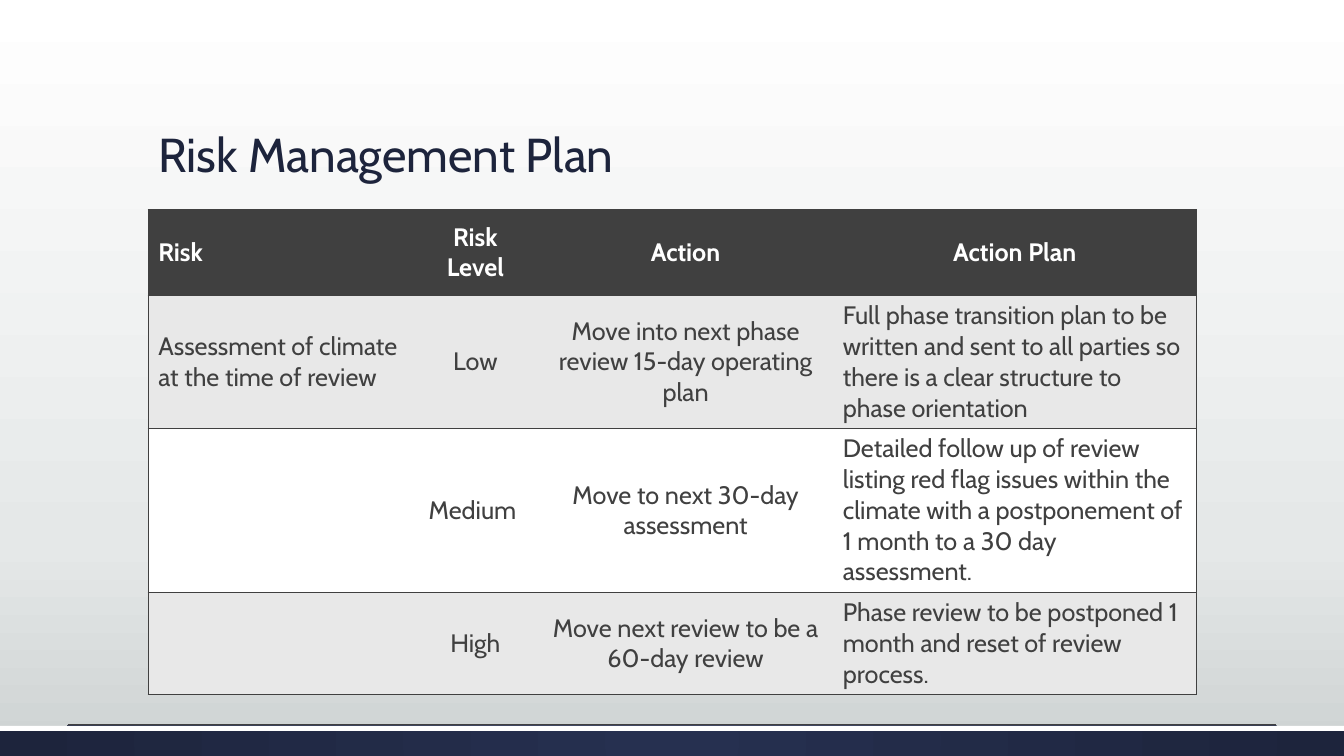
from lxml.etree import SubElement
from pptx import Presentation
from pptx.dml.color import RGBColor
from pptx.enum.shapes import MSO_CONNECTOR, MSO_SHAPE
from pptx.enum.text import MSO_ANCHOR, PP_ALIGN
from pptx.oxml.ns import qn
from pptx.util import Inches, Pt

FONT = "Cabin"
COLORS = {
    "navy": "1D243C",
    "blue": "263050",
    "dark": "404040",
    "band": "E8E8E8",
    "white": "FFFFFF",
    "mist": "E5E8E8",
    "gray": "CDD2D2",
}
TITLE = "Risk Management Plan"
ROWS = [
    ("Risk", "Risk Level", "Action", "Action Plan"),
    ("Assessment of climate at the time of review", "Low",
     "Move into next phase review 15-day operating plan",
     "Full phase transition plan to be written and sent to all parties so "
     "there is a clear structure to phase orientation"),
    ("", "Medium ", "Move to next 30-day assessment",
     "Detailed follow up of review listing red flag issues within the climate "
     "with a postponement of 1 month to a 30 day assessment."),
    ("", "High", "Move next review to be a 60-day review",
     "Phase review to be postponed 1 month and reset of review process."),
]
COLUMN_WIDTHS = (2.62, 1.25, 2.92, 3.61)
ROW_HEIGHT = 0.85
LEFT, TABLE_TOP = 1.47, 2.08
CONTENT_WIDTH = sum(COLUMN_WIDTHS)
SLIDE_WIDTH, SLIDE_HEIGHT = 13.33, 7.5
BAR_TOP = 7.2


def color(name):
    return RGBColor.from_string(COLORS[name])


def set_gradient(fill, element, stops, circular=False):
    """Fill with (percent, colour) stops, top to bottom or out from the centre."""
    fill.gradient()
    gradient = element.find(".//" + qn("a:gradFill"))
    for child in list(gradient):
        gradient.remove(child)
    stop_list = SubElement(gradient, qn("a:gsLst"))
    for percent, name in stops:
        stop = SubElement(stop_list, qn("a:gs"), pos=str(percent * 1000))
        SubElement(stop, qn("a:srgbClr"), val=COLORS[name])
    if circular:
        direction = SubElement(gradient, qn("a:path"), path="circle")
        sides = {side: "50000" for side in "ltrb"}
        SubElement(direction, qn("a:fillToRect"), **sides)
    else:
        SubElement(gradient, qn("a:lin"), ang="5400000", scaled="0")


def format_text(text_frame, alignment, font_format, color_name):
    paragraph = text_frame.paragraphs[0]
    paragraph.alignment = alignment
    for attribute, value in font_format.items():
        setattr(paragraph.font, attribute, value)
    paragraph.font.color.rgb = color(color_name)
    for run in paragraph.runs:
        for attribute, value in font_format.items():
            setattr(run.font, attribute, value)
        run.font.color.rgb = color(color_name)


def set_borders(cell, visible_sides):
    properties = cell._tc.get_or_add_tcPr()
    for side in "LRTB":
        line = SubElement(properties, qn("a:ln" + side), w=str(Pt(1)))
        if side in visible_sides:
            solid = SubElement(line, qn("a:solidFill"))
            SubElement(solid, qn("a:srgbClr"), val=COLORS["dark"])
        else:
            SubElement(line, qn("a:noFill"))


def add_bar(slide, height):
    bar = slide.shapes.add_shape(
        MSO_SHAPE.RECTANGLE, 0, Inches(BAR_TOP), Inches(SLIDE_WIDTH), Inches(height))
    bar.shadow.inherit = False
    bar.line.fill.background()
    return bar


def add_footer(slide):
    bar = add_bar(slide, SLIDE_HEIGHT - BAR_TOP)
    set_gradient(bar.fill, bar.element, [(0, "blue"), (100, "navy")], circular=True)
    strip = add_bar(slide, 0.05)
    strip.fill.solid()
    strip.fill.fore_color.rgb = color("white")
    margin, line_top = Inches(0.67), Inches(7.19)
    rule = slide.shapes.add_connector(
        MSO_CONNECTOR.STRAIGHT, margin, line_top, Inches(SLIDE_WIDTH) - margin, line_top)
    rule.line.width = Pt(0.75)
    rule.line.color.rgb = color("dark")
    SubElement(rule.element.spPr, qn("a:effectLst"))


def add_title(slide):
    title = slide.shapes.title
    box = {"left": LEFT, "top": 0.51, "width": CONTENT_WIDTH, "height": 1.35}
    for attribute, value in box.items():
        setattr(title, attribute, Inches(value))
    title.text_frame.text = TITLE
    title.text_frame.vertical_anchor = MSO_ANCHOR.BOTTOM
    title.text_frame.paragraphs[0].line_spacing = 0.9
    format_text(title.text_frame, PP_ALIGN.LEFT, {"name": FONT, "size": Pt(34)}, "navy")


def add_risk_table(slide):
    table = slide.shapes.add_table(
        len(ROWS), len(COLUMN_WIDTHS), Inches(LEFT), Inches(TABLE_TOP),
        Inches(CONTENT_WIDTH), Inches(ROW_HEIGHT * len(ROWS))).table
    for column, width in zip(table.columns, COLUMN_WIDTHS):
        column.width = Inches(width)
    last = len(COLUMN_WIDTHS) - 1
    for row_index, texts in enumerate(ROWS):
        is_header = row_index == 0
        fill_name = "dark" if is_header else ("white", "band")[row_index % 2]
        font_format = {"name": FONT, "size": Pt(18), "bold": is_header}
        for column_index, text in enumerate(texts):
            cell = table.cell(row_index, column_index)
            cell.text = text
            cell.vertical_anchor = MSO_ANCHOR.MIDDLE
            set_borders(cell, "TB" + {0: "L", last: "R"}.get(column_index, ""))
            cell.fill.solid()
            cell.fill.fore_color.rgb = color(fill_name)
            at_left = column_index == 0 or (column_index == last and not is_header)
            format_text(cell.text_frame, PP_ALIGN.LEFT if at_left else PP_ALIGN.CENTER,
                        font_format, "white" if is_header else "dark")


def main():
    presentation = Presentation()
    presentation.slide_width = Inches(SLIDE_WIDTH)
    presentation.slide_height = Inches(SLIDE_HEIGHT)
    slide = presentation.slides.add_slide(presentation.slide_layouts[5])
    set_gradient(slide.background.fill, slide.element,
                 [(0, "white"), (72, "mist"), (100, "gray")])
    add_footer(slide)
    add_title(slide)
    add_risk_table(slide)
    presentation.save("out.pptx")


if __name__ == "__main__":
    main()
